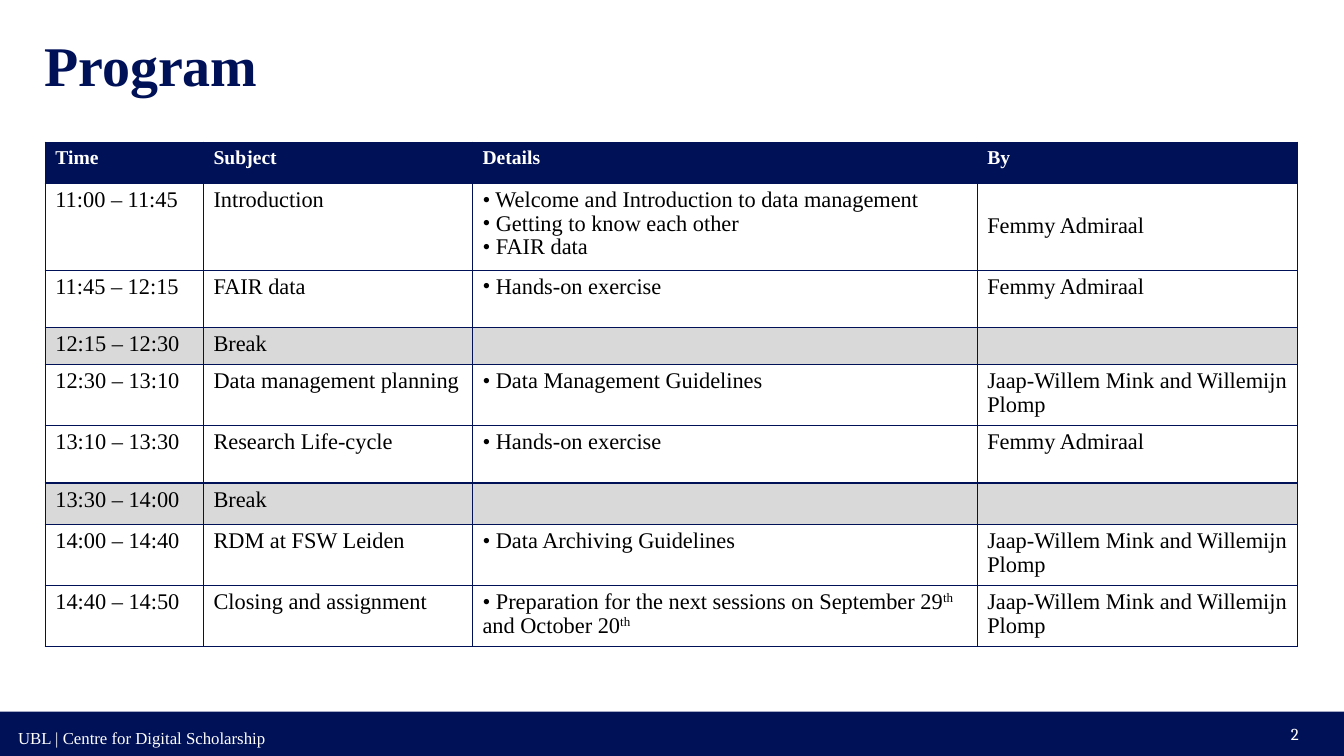
from lxml import etree
from pptx import Presentation
from pptx import util as u
from pptx.dml.color import RGBColor
from pptx.enum import shapes, text
from pptx.oxml.ns import qn

COLORS = {"navy": "001158", "white": "FFFFFF", "black": "000000", "grey": "D9D9D9"}
SERIF = "Times New Roman"
MINK_PLOMP = "Jaap-Willem Mink and Willemijn Plomp"
ADMIRAAL = "Femmy Admiraal"

HEADERS = ["Time", "Subject", "Details", "By"]
COL_WIDTHS = [1.57, 2.67, 5.01, 3.18]
HEADER_HEIGHT = 0.41

# Each session: height, time, subject, details, speaker.
# A detail is a list of runs; every second run is superscript.
SESSIONS = [
    (0.83, "11:00 – 11:45", "Introduction",
     [["Welcome and Introduction to data management"],
      ["Getting to know each other"], ["FAIR data"]], ADMIRAAL),
    (0.57, "11:45 – 12:15", "FAIR data", [["Hands-on exercise"]], ADMIRAAL),
    (0.35, "12:15 – 12:30", "Break", [], ""),
    (0.6, "12:30 – 13:10", "Data management planning",
     [["Data Management Guidelines"]], MINK_PLOMP),
    (0.57, "13:10 – 13:30", "Research Life-cycle", [["Hands-on exercise"]], ADMIRAAL),
    (0.41, "13:30 – 14:00", "Break", [], ""),
    (0.6, "14:00 – 14:40", "RDM at FSW Leiden",
     [["Data Archiving Guidelines"]], MINK_PLOMP),
    (0.59, "14:40 – 14:50", "Closing and assignment",
     [["Preparation for the next sessions on September 29", "th",
       " and October 20", "th"]], MINK_PLOMP),
]


def rgb(name):
    return RGBColor.from_string(COLORS[name])


def add_run(p, content, size, color, bold=False, font=SERIF, superscript=False):
    r = p.add_run()
    r.text = content
    r.font.name = font
    r.font.size = u.Pt(size)
    r.font.bold = bold
    r.font.color.rgb = rgb(color)
    if superscript:
        r._r.get_or_add_rPr().set("baseline", "30000")


def add_bar(s, left, top, width, height):
    sp = s.shapes.add_shape(shapes.MSO_SHAPE.RECTANGLE, u.Inches(left), u.Inches(top),
                            u.Inches(width), u.Inches(height))
    sp.shadow.inherit = False
    sp.fill.solid()
    sp.fill.fore_color.rgb = rgb("navy")
    sp.line.fill.background()
    return sp


def add_label(s, left, top, width, height, inset, align=text.PP_ALIGN.LEFT):
    box = s.shapes.add_textbox(u.Inches(left), u.Inches(top),
                               u.Inches(width), u.Inches(height))
    tf = box.text_frame
    tf.word_wrap = True
    tf.vertical_anchor = text.MSO_ANCHOR.MIDDLE
    tf.margin_left = tf.margin_right = u.Inches(inset)
    tf.margin_top = tf.margin_bottom = 0
    p = tf.paragraphs[0]
    p.alignment = align
    return p


def style_cell(cell, fill=None):
    tc_pr = cell._tc.get_or_add_tcPr()
    for side in ("lnL", "lnR", "lnT", "lnB"):
        ln = etree.SubElement(tc_pr, qn("a:" + side), w=str(u.Pt(1)))
        solid = etree.SubElement(ln, qn("a:solidFill"))
        etree.SubElement(solid, qn("a:srgbClr"), val=COLORS["navy"])
    if fill:
        cell.fill.solid()
        cell.fill.fore_color.rgb = rgb(fill)
    else:
        cell.fill.background()


def add_bullet(p):
    p_pr = p._p.get_or_add_pPr()
    p_pr.set("marL", "0")
    p_pr.set("indent", "0")
    etree.SubElement(p_pr, qn("a:buFont"), typeface=SERIF)
    etree.SubElement(p_pr, qn("a:buChar"), char="•")


def fill_cell(cell, lines, bulleted=False):
    tf = cell.text_frame
    for i, runs in enumerate(lines):
        p = tf.add_paragraph() if i else tf.paragraphs[0]
        p.line_spacing = 0.95
        if bulleted:
            add_bullet(p)
        for j, content in enumerate(runs):
            lead = " " if bulleted and j == 0 else ""
            add_run(p, lead + content, 16, "black", superscript=j % 2 == 1)
    if not lines:
        # Keeps an empty cell from stretching its row
        etree.SubElement(tf.paragraphs[0]._p, qn("a:endParaRPr"), sz="1600")


def add_program(s):
    heights = [HEADER_HEIGHT] + [session[0] for session in SESSIONS]
    frame = s.shapes.add_table(len(heights), len(HEADERS), u.Inches(0.45), u.Inches(1.41),
                               u.Inches(sum(COL_WIDTHS)), u.Inches(sum(heights)))
    table = frame.table
    table.horz_banding = False
    for column, width in zip(table.columns, COL_WIDTHS):
        column.width = u.Inches(width)
    for row, height in zip(table.rows, heights):
        row.height = u.Inches(height)

    # Header row
    for col, header in enumerate(HEADERS):
        cell = table.cell(0, col)
        style_cell(cell, "navy")
        add_run(cell.text_frame.paragraphs[0], header, 14, "white", bold=True)

    # Sessions, with breaks shaded
    for row, (_, time, subject, details, speaker) in enumerate(SESSIONS, 1):
        columns = [[[time]], [[subject]], details, [[speaker]] if speaker else []]
        for col, lines in enumerate(columns):
            cell = table.cell(row, col)
            style_cell(cell, "grey" if subject == "Break" else None)
            fill_cell(cell, lines, bulleted=col == 2)
    table.cell(1, 3).vertical_anchor = text.MSO_ANCHOR.MIDDLE


def add_footer(s):
    add_bar(s, 0, 7.06, 13.34, 0.44)
    number = add_label(s, 9.99, 7.08, 3, 0.4, 0.1, text.PP_ALIGN.RIGHT)
    add_run(number, "2", 12, "white", font="Cambria")

    tf = add_bar(s, 0.06, 7.1, 7.32, 0.34).text_frame
    tf.vertical_anchor = text.MSO_ANCHOR.TOP
    tf.margin_left = tf.margin_top = u.Inches(0.12)
    tf.margin_bottom = 0
    p = tf.paragraphs[0]
    p.alignment = text.PP_ALIGN.LEFT
    add_run(p, "UBL | Centre for Digital Scholarship", 12, "white")


def main():
    prs = Presentation()
    prs.slide_width = u.Inches(13.34)
    prs.slide_height = u.Inches(7.5)
    s = prs.slides.add_slide(prs.slide_layouts[6])

    # Title
    title = add_label(s, 0.44, 0.44, 12.46, 0.47, 0)
    title.line_spacing = 0.9
    add_run(title, "Program", 40, "navy", bold=True)

    add_program(s)
    add_footer(s)
    prs.save("out.pptx")


if __name__ == "__main__":
    main()
